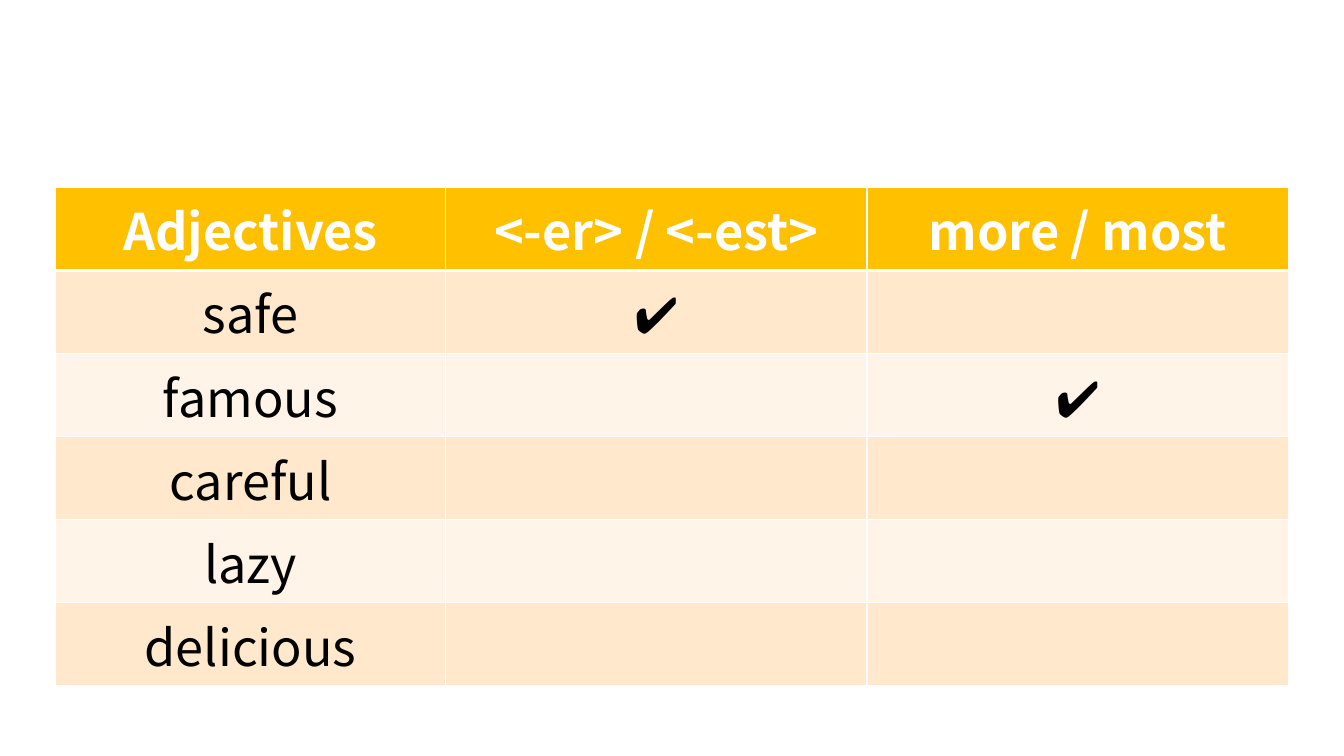
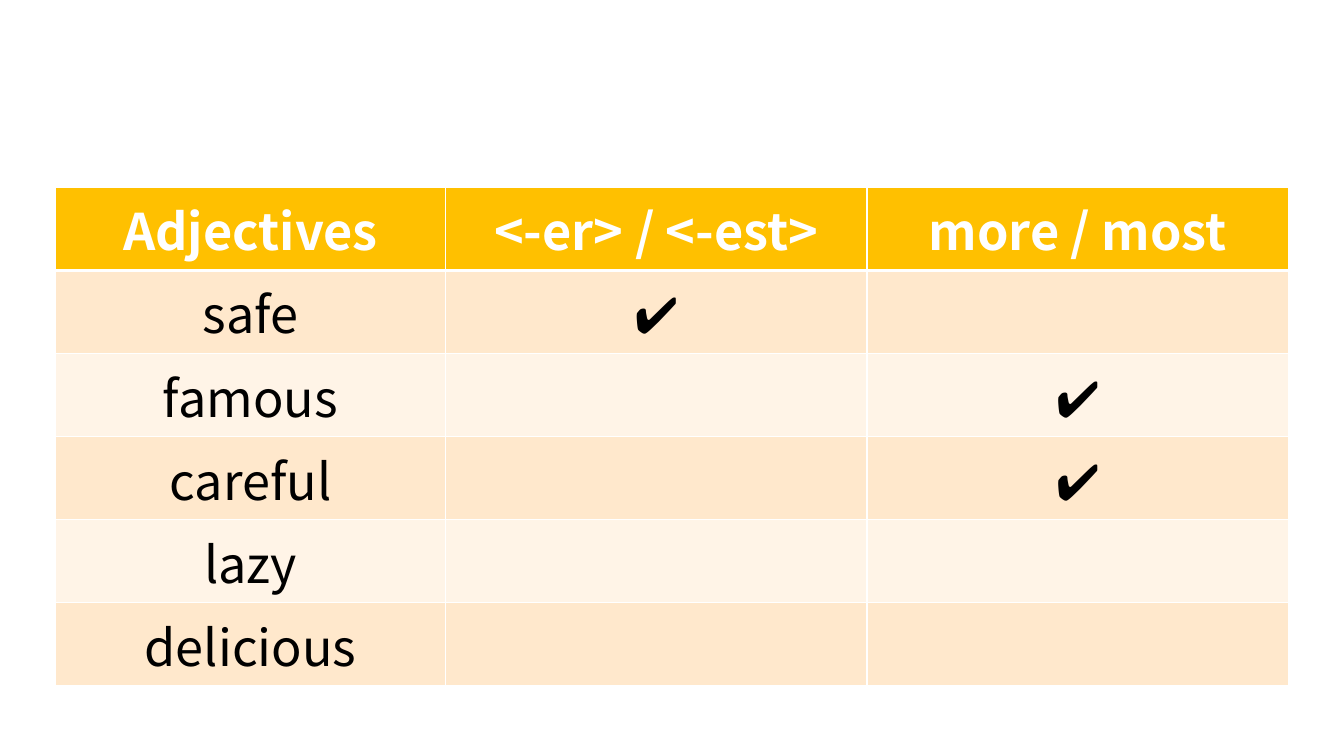
from lxml.etree import SubElement
from pptx import Presentation
from pptx.dml.color import RGBColor
from pptx.enum.text import PP_ALIGN as Align
from pptx.oxml.ns import qn
from pptx.util import Inches, Pt

FONT = "Noto Sans CJK JP"
WHITE = RGBColor(0xFF, 0xFF, 0xFF)
BLACK = RGBColor(0x00, 0x00, 0x00)
GOLD = RGBColor(0xFF, 0xC0, 0x00)
PEACH = RGBColor(0xFF, 0xE8, 0xCC)
CREAM = RGBColor(0xFF, 0xF4, 0xE7)

LEFT, TOP, ROW_HEIGHT = 0.55, 1.86, 0.82
COLUMN_WIDTHS = (3.87, 4.18, 4.18)
THIN, THICK = 1, 3

HEADINGS = ("Adjectives", "<-er> / <-est>", "more / most")
ADJECTIVES = ("safe", "famous", "careful", "lazy", "delicious")
TICK = "✔"
ER_EST, MORE_MOST = 1, 2
FIRST_ANSWERS = {"safe": ER_EST, "famous": MORE_MOST}
ANSWERS_BY_SLIDE = (FIRST_ANSWERS, {**FIRST_ANSWERS, "careful": MORE_MOST})


def set_borders(cell, top, bottom):
    properties = cell._tc.get_or_add_tcPr()
    for side, width in (("L", THIN), ("R", THIN), ("T", top), ("B", bottom)):
        line = SubElement(properties, qn(f"a:ln{side}"), w=str(Pt(width)))
        fill = SubElement(line, qn("a:solidFill"))
        SubElement(fill, qn("a:srgbClr"), val=str(WHITE))


def format_cell(cell, text, row):
    is_header = row == 0
    set_borders(cell, THICK if row == 1 else THIN, THICK if is_header else THIN)
    cell.fill.solid()
    cell.fill.fore_color.rgb = GOLD if is_header else (CREAM, PEACH)[row % 2]
    cell.text = text
    para = cell.text_frame.paragraphs[0]
    para.alignment = Align.CENTER
    font = para.font
    font.name, font.size, font.bold = FONT, Pt(36), is_header
    font.color.rgb = WHITE if is_header else BLACK


def answer_rows(answers):
    rows = [HEADINGS]
    for adjective in ADJECTIVES:
        ticks = [TICK if answers.get(adjective) == column else ""
                 for column in (ER_EST, MORE_MOST)]
        rows.append((adjective, *ticks))
    return rows


def add_answer_table(page, answers):
    rows = answer_rows(answers)
    table = page.shapes.add_table(
        len(rows), len(HEADINGS), Inches(LEFT), Inches(TOP),
        Inches(sum(COLUMN_WIDTHS)), Inches(ROW_HEIGHT * len(rows))).table
    for column, width in zip(table.columns, COLUMN_WIDTHS):
        column.width = Inches(width)
    for row, texts in enumerate(rows):
        for column, text in enumerate(texts):
            format_cell(table.cell(row, column), text, row)


def main():
    deck = Presentation()
    deck.slide_width, deck.slide_height = Inches(13.33), Inches(7.5)
    blank = deck.slide_layouts[6]
    for answers in ANSWERS_BY_SLIDE:
        add_answer_table(deck.slides.add_slide(blank), answers)
    deck.save("out.pptx")


if __name__ == "__main__":
    main()
